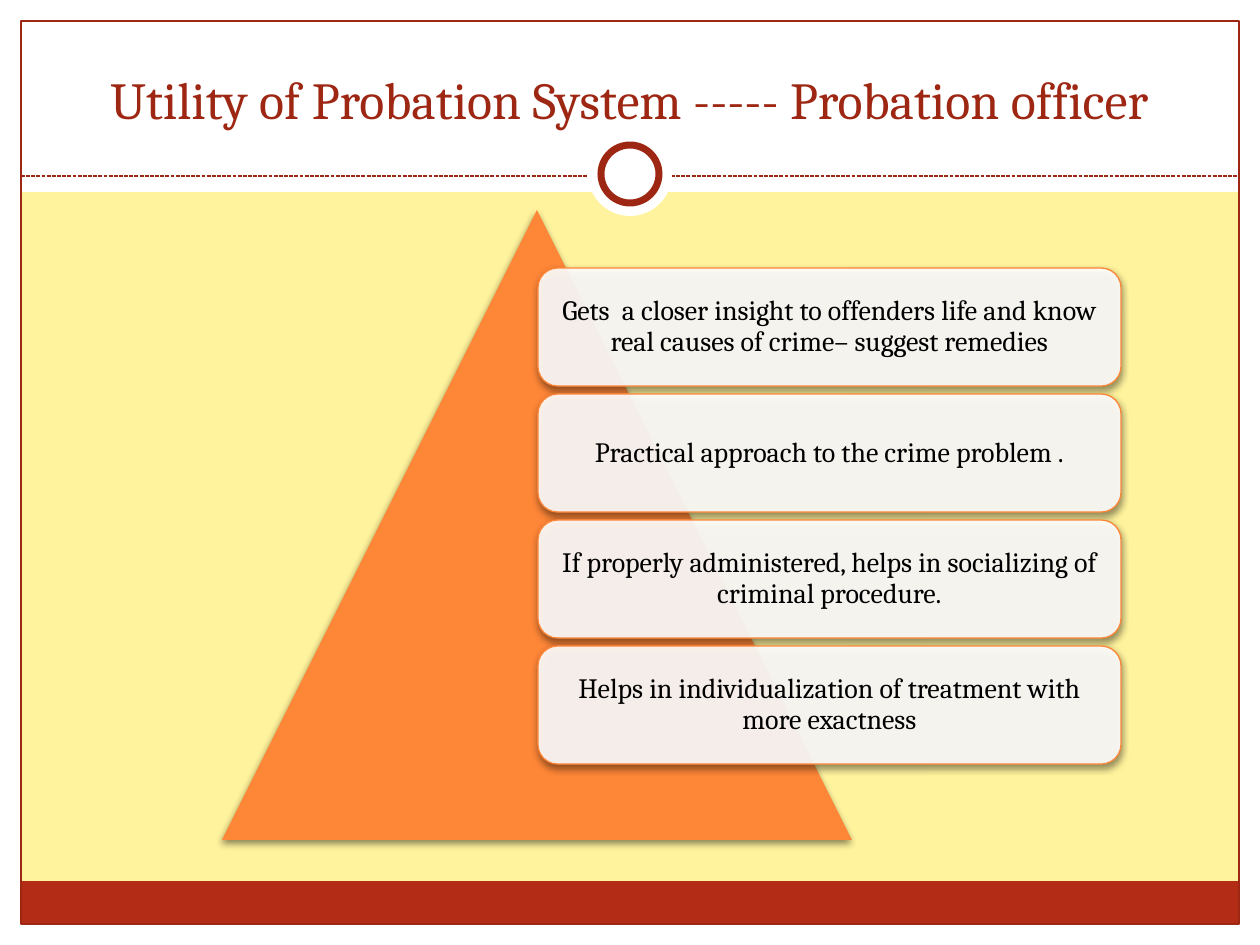
from lxml.etree import SubElement
from pptx import Presentation
from pptx.dml.color import RGBColor
from pptx.enum.dml import MSO_LINE
from pptx.enum.shapes import MSO_CONNECTOR, MSO_SHAPE
from pptx.enum.text import MSO_ANCHOR, MSO_AUTO_SIZE, PP_ALIGN
from pptx.oxml.ns import qn
from pptx.util import Emu, Pt

PX = 914400 / 126
WHITE, RUST, BRICK, ORANGE = "FFFFFF", "9E2713", "B32C16", "FE8637"
color = RGBColor.from_string


def px(*lengths):
    return [Emu(round(length * PX)) for length in lengths]


def add_shape(kind, box, fill=None, line=None, width=0.75, shadow=False):
    shape = slide.shapes.add_shape(kind, *px(*box))
    shape.shadow.inherit = False
    if fill:
        shape.fill.solid()
        shape.fill.fore_color.rgb = color(fill)
    else:
        shape.fill.background()
    if line:
        shape.line.color.rgb = color(line)
        shape.line.width = Pt(width)
    else:
        shape.line.fill.background()
    if shadow:
        effects = shape._element.spPr.find(qn("a:effectLst"))
        outer = SubElement(effects, qn("a:outerShdw"), blurRad=str(Pt(4)),
                           dist=str(Pt(2)), dir="5400000", rotWithShape="0")
        black = SubElement(outer, qn("a:srgbClr"), val="000000")
        SubElement(black, qn("a:alpha"), val="45000")
    return shape


presentation = Presentation()
presentation.slide_width, presentation.slide_height = px(1260, 945)
slide = presentation.slides.add_slide(presentation.slide_layouts[5])
slide.background.fill.solid()
slide.background.fill.fore_color.rgb = color("FFF39D")

# White margins, footer band and frame
margins = [(0, 924, 1260, 21), (0, 0, 1260, 192), (0, 0, 21, 945), (1239, 0, 21, 945)]
for margin in margins:
    add_shape(MSO_SHAPE.RECTANGLE, margin, WHITE)
add_shape(MSO_SHAPE.RECTANGLE, (21, 881, 1217, 43), BRICK)
add_shape(MSO_SHAPE.RECTANGLE, (21, 21, 1218, 903), line=RUST)

# Dashed divider with its ring
divider = slide.shapes.add_connector(MSO_CONNECTOR.STRAIGHT, *px(21, 176, 1239, 176))
divider.line.color.rgb = color(RUST)
divider.line.width = Pt(0.75)
divider.line.dash_style = MSO_LINE.SQUARE_DOT
SubElement(divider._element.spPr, qn("a:effectLst"))
add_shape(MSO_SHAPE.OVAL, (588, 132, 84, 84), WHITE)
add_shape(MSO_SHAPE.OVAL, (601, 145, 58, 58), WHITE, RUST, 4)

title = slide.shapes.title
title.left, title.top, title.width, title.height = px(42, 32, 1176, 104)
slide.shapes._spTree.append(title._element)  # in front of the white band
title.text_frame.text = "Utility of Probation System ----- Probation officer"
title.text_frame.auto_size = MSO_AUTO_SIZE.NONE
title.text_frame.vertical_anchor = MSO_ANCHOR.BOTTOM
heading = title.text_frame.paragraphs[0]
heading.alignment = PP_ALIGN.CENTER
heading.font.name = "Cambria"
heading.font.size = Pt(29.7)
heading.font.color.rgb = color(RUST)

# Pyramid with the four benefits
add_shape(MSO_SHAPE.ISOSCELES_TRIANGLE, (222, 210, 630, 630), ORANGE, shadow=True)
benefits = [
    "Gets  a closer insight to offenders life and know real causes of crime– suggest remedies",
    "Practical approach to the crime problem .",
    "If properly administered, helps in socializing of criminal procedure.",
    "Helps in individualization of treatment with more exactness",
]
for row, benefit in enumerate(benefits):
    card = add_shape(MSO_SHAPE.ROUNDED_RECTANGLE, (538, 268 + 126 * row, 583, 118),
                     WHITE, ORANGE, shadow=True)
    fill_color = card._element.spPr.find(qn("a:solidFill")).find(qn("a:srgbClr"))
    SubElement(fill_color, qn("a:alpha"), val="90000")
    frame = card.text_frame
    frame.word_wrap = True
    frame.vertical_anchor = MSO_ANCHOR.MIDDLE
    (frame.margin_left, frame.margin_top,
     frame.margin_right, frame.margin_bottom) = px(9, 9, 9, 9)
    frame.text = benefit
    paragraph = frame.paragraphs[0]
    paragraph.alignment = PP_ALIGN.CENTER
    paragraph.line_spacing = 0.9
    paragraph.font.name = "Cambria"
    paragraph.font.size = Pt(16)
    paragraph.font.color.rgb = color("000000")

presentation.save("out.pptx")
